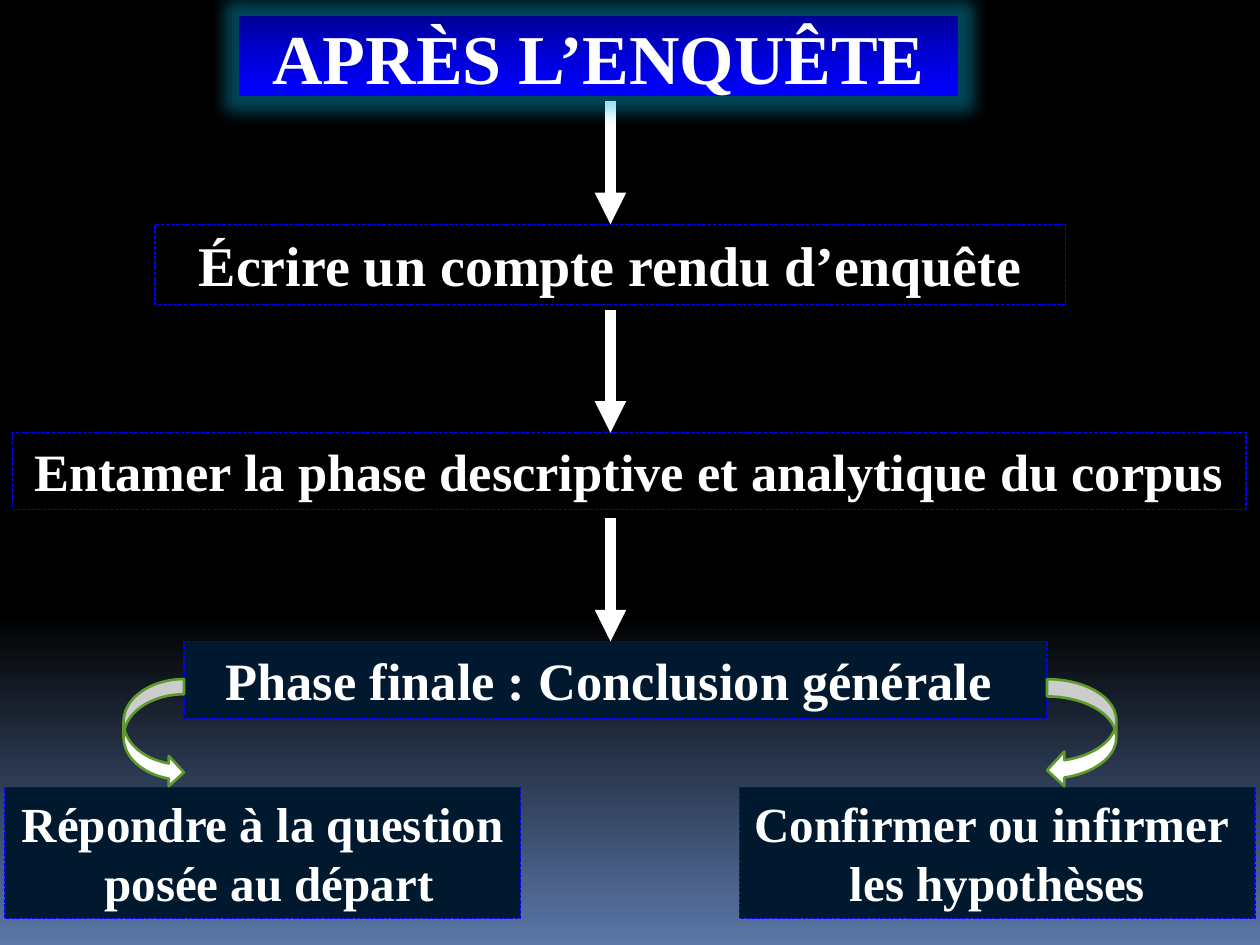
from dataclasses import dataclass

from lxml.etree import SubElement as Sub
from pptx import Presentation
from pptx.dml.color import RGBColor as Rgb
from pptx.enum.dml import MSO_LINE as Dash
from pptx.enum.shapes import MSO_CONNECTOR as Link, MSO_SHAPE as Form
from pptx.enum.text import MSO_ANCHOR as Anchor, MSO_AUTO_SIZE as Fit, PP_ALIGN as Align
from pptx.oxml.ns import qn
from pptx.util import Inches, Pt


@dataclass(frozen=True)
class Theme:
    font: str = "Times New Roman"
    white: str = "FFFFFF"
    navy: str = "00192F"
    blue: str = "0000FF"
    green: str = "5E9B2C"
    glow: str = "00ADDC"
    back: tuple = ((0, "000000"), (65, "000000"), (100, "5B77A8"))
    band: tuple = ((0, "000097"), (50, "0000D7"), (100, "0000FF"))
    title: int = 40
    large: int = 32
    mid: int = 30
    small: int = 28


@dataclass(frozen=True)
class Area:
    left: float
    top: float
    width: float
    height: float

    def place(self) -> tuple:
        return (across(self.left), down(self.top),
                across(self.width), down(self.height))


@dataclass(frozen=True)
class Step:
    text: str
    area: Area
    size: int
    fill: str = ""


@dataclass(frozen=True)
class Curve:
    form: Form
    area: Area


LOOK = Theme()
WIDE, HIGH = Inches(10), Inches(7.5)
FIRST, PITCH, DROP = 23.73, 22.07, 13
AXIS = 48.45
LOW, HALF = 83.33, 40.9

TITLE = Area(19, 1.73, 57, 8.4)
STEPS = (
    Step("Écrire un compte rendu d’enquête",
         Area(12.3, FIRST, 72.3, 8.53), LOOK.large),
    Step("Entamer la phase descriptive et analytique du corpus",
         Area(1, FIRST + PITCH, 97.9, 8.13), LOOK.mid),
    Step("Phase finale : Conclusion générale ",
         Area(14.6, FIRST + 2 * PITCH, 68.5, 8.13), LOOK.mid, LOOK.navy),
)
ENDS = (
    Step("Répondre à la question\n posée au départ",
         Area(0.4, LOW, HALF, 13.87), LOOK.small, LOOK.navy),
    Step("Confirmer ou infirmer \nles hypothèses",
         Area(58.7, LOW, HALF, 13.87), LOOK.small, LOOK.navy),
)
CURVES = (
    Curve(Form.CURVED_LEFT_ARROW, Area(83.1, 71.87, 5.5, 11.47)),
    Curve(Form.CURVED_RIGHT_ARROW, Area(9.8, 71.87, 4.8, 11.47)),
)


def across(share: float) -> int:
    return round(WIDE * share / 100)


def down(share: float) -> int:
    return round(HIGH * share / 100)


def tint(fill, hue: str) -> None:
    fill.solid()
    fill.fore_color.rgb = Rgb.from_string(hue)


def blend(fill, root, stops: tuple) -> None:
    fill.gradient()
    fill.gradient_angle = 270
    ramp = root.find(".//" + qn("a:gsLst"))
    for old in list(ramp):
        ramp.remove(old)
    for spot, hue in stops:
        stop = Sub(ramp, qn("a:gs"), pos=str(spot * 1000))
        Sub(stop, qn("a:srgbClr"), val=hue)


def write(shape, text: str, size: int, anchor: Anchor, fit: Fit) -> None:
    frame = shape.text_frame
    frame.text = text
    frame.word_wrap = True
    frame.auto_size = fit
    frame.vertical_anchor = anchor
    for para in frame.paragraphs:
        para.alignment = Align.CENTER
        for run in para.runs:
            run.font.name = LOOK.font
            run.font.size = Pt(size)
            run.font.bold = True
            run.font.color.rgb = Rgb.from_string(LOOK.white)


def draw_step(slide, step: Step):
    box = slide.shapes.add_textbox(*step.area.place())
    if step.fill:
        tint(box.fill, step.fill)
    tint(box.line.fill, LOOK.blue)
    box.line.width = Pt(0.75)
    box.line.dash_style = Dash.SQUARE_DOT
    write(box, step.text, step.size, Anchor.TOP, Fit.SHAPE_TO_FIT_TEXT)
    return box


def draw_arrow(slide, box, area: Area) -> None:
    line = slide.shapes.add_connector(
        Link.STRAIGHT, across(AXIS), down(area.top - DROP),
        across(AXIS), down(area.top))
    if abs(area.left + area.width / 2 - AXIS) < 0.1:
        line.end_connect(box, 0)
    tint(line.line.fill, LOOK.white)
    line.line.width = Pt(6)
    Sub(line.line._get_or_add_ln(), qn("a:tailEnd"), type="triangle")
    Sub(line.element.spPr, qn("a:effectLst"))


def draw_curve(slide, curve: Curve) -> None:
    shape = slide.shapes.add_shape(curve.form, *curve.area.place())
    shape.shadow.inherit = False
    tint(shape.fill, LOOK.white)
    tint(shape.line.fill, LOOK.green)
    shape.line.width = Pt(1.5)


def draw_title(slide) -> None:
    head = slide.shapes.title
    head.left, head.top, head.width, head.height = TITLE.place()
    blend(head.fill, head.element, LOOK.band)
    write(head, "APRÈS L’ENQUÊTE", LOOK.title, Anchor.MIDDLE, Fit.NONE)
    glow = Sub(Sub(head.element.spPr, qn("a:effectLst")), qn("a:glow"),
               rad=str(Inches(0.25)))
    Sub(Sub(glow, qn("a:srgbClr"), val=LOOK.glow), qn("a:alpha"), val="40000")
    slide.shapes.element.append(head.element)


def main() -> None:
    deck = Presentation()
    deck.slide_width, deck.slide_height = WIDE, HIGH
    slide = deck.slides.add_slide(deck.slide_layouts[5])
    blend(slide.background.fill, slide.element, LOOK.back)
    for step in STEPS:
        draw_arrow(slide, draw_step(slide, step), step.area)
    draw_title(slide)
    for step in ENDS:
        draw_step(slide, step)
    for curve in CURVES:
        draw_curve(slide, curve)
    deck.save("out.pptx")


if __name__ == "__main__":
    main()
